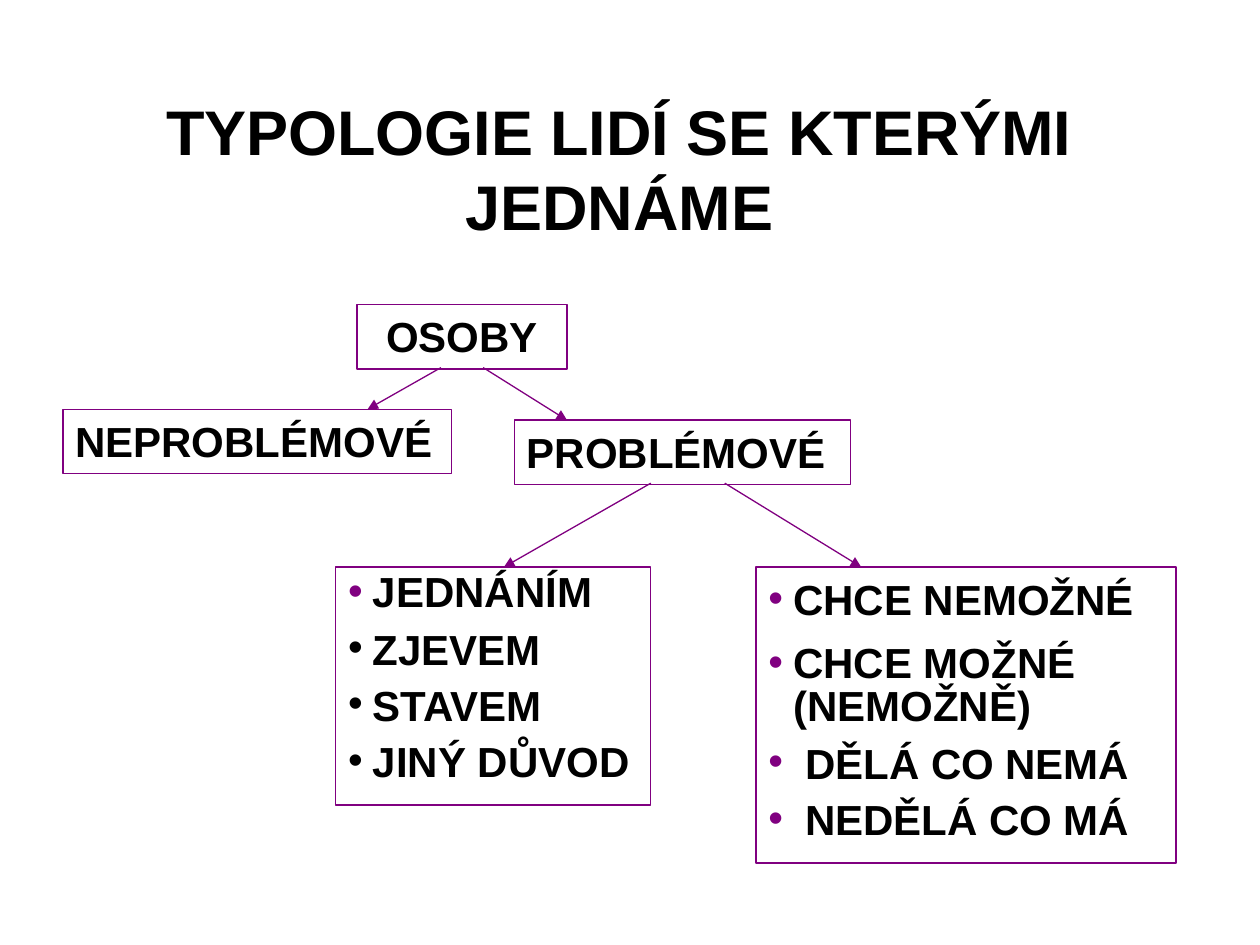
"""Build a slide with a typology tree of the people we deal with."""
import pptx
import pptx.dml.color
import pptx.enum.shapes
import pptx.enum.text
import pptx.oxml.ns
import pptx.util
from lxml import etree
from pptx.util import Cm

BLACK = pptx.dml.color.RGBColor(0x00, 0x00, 0x00)
PURPLE = pptx.dml.color.RGBColor(0x80, 0x00, 0x80)
WHITE = pptx.dml.color.RGBColor(0xFF, 0xFF, 0xFF)
LEFT = pptx.enum.text.PP_ALIGN.LEFT
CENTER = pptx.enum.text.PP_ALIGN.CENTER
TOP = pptx.enum.text.MSO_ANCHOR.TOP
MIDDLE = pptx.enum.text.MSO_ANCHOR.MIDDLE
qn = pptx.oxml.ns.qn


def add_text(paragraph, text, size, alignment):
    paragraph.alignment = alignment
    run = paragraph.add_run()
    run.text = text
    run.font.name = "Arial"
    run.font.size = pptx.util.Pt(size)
    run.font.bold = True
    run.font.color.rgb = BLACK


def add_box(left, top, width, height):
    shape = slide.shapes.add_shape(
        pptx.enum.shapes.MSO_SHAPE.RECTANGLE, Cm(left), Cm(top), Cm(width), Cm(height))
    shape.shadow.inherit = False
    shape.fill.background()
    shape.line.color.rgb = PURPLE
    shape.line.width = pptx.util.Pt(0.75)
    shape.text_frame.word_wrap = True
    shape.text_frame.vertical_anchor = TOP
    return shape.text_frame


presentation = pptx.Presentation()
presentation.slide_width = Cm(25.4)
presentation.slide_height = Cm(19.05)
slide = presentation.slides.add_slide(presentation.slide_layouts[5])
slide.background.fill.solid()
slide.background.fill.fore_color.rgb = WHITE

title = slide.shapes.title
title.left, title.top, title.width, title.height = Cm(1.69), Cm(1.69), Cm(21.59), Cm(3.39)
title.text_frame.word_wrap = True
title.text_frame.vertical_anchor = MIDDLE
add_text(title.text_frame.paragraphs[0], "TYPOLOGIE LIDÍ SE KTERÝMI JEDNÁME", 36, CENTER)

nodes = [
    ("OSOBY", 7.2, 6.14, 4.23, CENTER),
    ("NEPROBLÉMOVÉ", 1.27, 8.25, 7.83, LEFT),
    ("PROBLÉMOVÉ", 10.37, 8.47, 6.77, LEFT),
]
for text, left, top, width, alignment in nodes:
    frame = add_box(left, top, width, 1.3)
    add_text(frame.paragraphs[0], text, 24, alignment)

lists = [
    (6.77, 6.35, 4.8, [
        ("JEDNÁNÍM", 0.85, PURPLE, 0.5),
        ("ZJEVEM", 0.7, BLACK, 0.5),
        ("STAVEM", 0.7, BLACK, 0.5),
        ("JINÝ DŮVOD", 0.7, BLACK, 0.5),
    ]),
    (15.24, 8.47, 5.97, [
        ("CHCE NEMOŽNÉ", 1.0, PURPLE, 0.5),
        ("CHCE MOŽNÉ (NEMOŽNĚ)", 0.85, PURPLE, 0.5),
        ("DĚLÁ CO NEMÁ", 0.7, PURPLE, 0.74),
        ("NEDĚLÁ CO MÁ", 0.7, PURPLE, 0.74),
    ]),
]
for left, width, height, items in lists:
    frame = add_box(left, 11.43, width, height)
    for index, (text, spacing, bullet_color, indent) in enumerate(items):
        paragraph = frame.add_paragraph() if index else frame.paragraphs[0]
        add_text(paragraph, text, 24, LEFT)
        paragraph.line_spacing = spacing
        paragraph.space_before = pptx.util.Pt(12 if index else 0)
        properties = paragraph._p.get_or_add_pPr()
        properties.set("marL", str(Cm(indent)))
        properties.set("indent", str(-Cm(indent)))
        color = etree.SubElement(properties, qn("a:buClr"))
        etree.SubElement(color, qn("a:srgbClr"), val=str(bullet_color))
        etree.SubElement(properties, qn("a:buFont"), typeface="Arial")
        etree.SubElement(properties, qn("a:buChar"), char="•")

arrows = [
    (8.89, 7.41, 7.41, 8.25),
    (9.74, 7.41, 11.43, 8.47),
    (13.12, 9.74, 10.16, 11.43),
    (14.61, 9.74, 17.36, 11.43),
]
for start_x, start_y, end_x, end_y in arrows:
    arrow = slide.shapes.add_connector(
        pptx.enum.shapes.MSO_CONNECTOR.STRAIGHT,
        Cm(start_x), Cm(start_y), Cm(end_x), Cm(end_y))
    arrow.line.color.rgb = PURPLE
    arrow.line.width = pptx.util.Pt(0.75)
    etree.SubElement(arrow.line._get_or_add_ln(), qn("a:tailEnd"), type="triangle")
    etree.SubElement(arrow._element.spPr, qn("a:effectLst"))

presentation.save("out.pptx")
